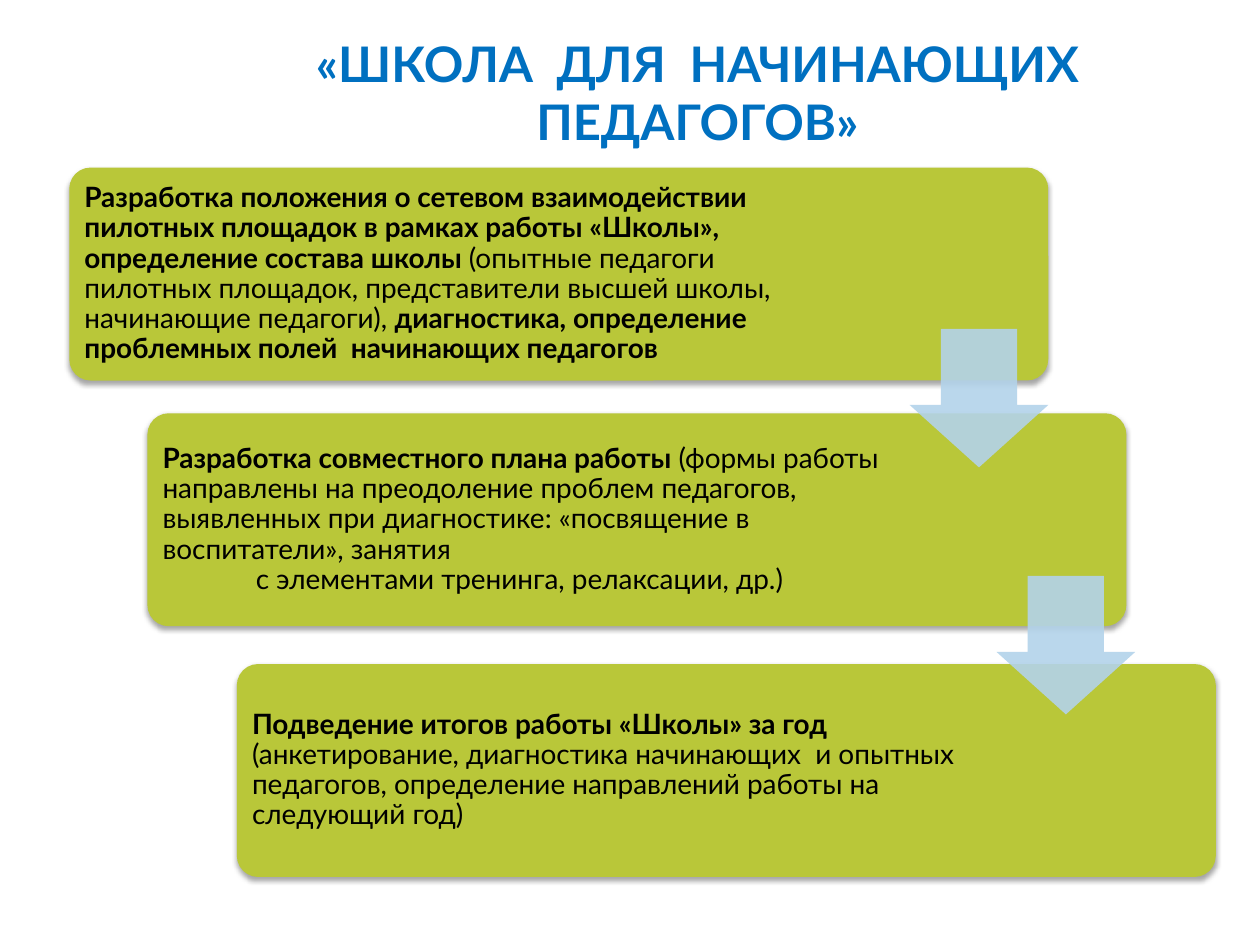
from lxml import etree
from pptx import Presentation
from pptx.dml.color import RGBColor
from pptx.enum.shapes import MSO_SHAPE
from pptx.enum.text import MSO_ANCHOR, MSO_AUTO_SIZE, PP_ALIGN
from pptx.oxml.ns import qn
from pptx.util import Inches, Pt

ROUND = MSO_SHAPE.ROUNDED_RECTANGLE
DOWN = MSO_SHAPE.DOWN_ARROW
MIDDLE = MSO_ANCHOR.MIDDLE
FIXED = MSO_AUTO_SIZE.NONE
CENTER = PP_ALIGN.CENTER
BLUE = RGBColor(0x00, 0x70, 0xC0)
GREEN = RGBColor(0xB9, 0xC7, 0x39)
PALE = RGBColor(0xB3, 0xD3, 0xEA)
BLACK = RGBColor(0, 0, 0)

HEAD = {"name": "Lato", "size": Pt(28), "bold": True}
BODY = {"name": "Lato", "size": Pt(16)}
FRAME = {"word_wrap": True, "auto_size": FIXED, "vertical_anchor": MIDDLE}
INSET = {"margin_" + side: Inches(0.07)
         for side in ("left", "top", "right", "bottom")}

STEPS = [
    (0.55, 1.33, 5.95, [(0, [
        ("Разработка положения о сетевом взаимодействии пилотных площадок "
         "в рамках работы «Школы», определение состава школы ", True),
        ("(опытные педагоги пилотных площадок, представители высшей школы, "
         "начинающие педагоги), ", False),
        ("диагностика, определение проблемных полей  начинающих педагогов",
         True)])]),
    (1.17, 3.28, 5.89, [
        (0, [("Разработка совместного плана работы ", True),
             ("(формы работы направлены на преодоление проблем педагогов, "
              "выявленных при диагностике: «посвящение в воспитатели», "
              "занятия", False)]),
        (0.74, [("с элементами тренинга, релаксации, др.)", False)])]),
    (1.88, 5.27, 5.89, [(0, [
        ("Подведение итогов работы «Школы» за год ", True),
        ("(анкетирование, диагностика начинающих  и опытных педагогов, "
         "определение направлений работы на следующий год)", False)])]),
]
ARROWS = [(7.22, 2.61), (7.91, 4.57)]


def style(item, values):
    for key, value in values.items():
        setattr(item, key, value)


def draw(kind, left, top, width, height, color, adjust):
    shape = slide.shapes.add_shape(
        kind, Inches(left), Inches(top), Inches(width), Inches(height))
    shape.fill.solid()
    shape.fill.fore_color.rgb = color
    shape.line.fill.background()
    shape.shadow.inherit = False
    for i, value in enumerate(adjust):
        shape.adjustments[i] = value
    return shape._element.spPr


deck = Presentation()
deck.slide_width = Inches(10)
deck.slide_height = Inches(7.5)
slide = deck.slides.add_slide(deck.slide_layouts[5])

title = slide.shapes.title
style(title, {"left": Inches(1.57), "top": Inches(0.48),
              "width": Inches(7.93), "height": Inches(0.5)})
style(title.text_frame, FRAME)
para = title.text_frame.paragraphs[0]
para.alignment = CENTER
run = para.add_run()
run.text = "«ШКОЛА  ДЛЯ  НАЧИНАЮЩИХ ПЕДАГОГОВ»"
style(run.font, HEAD)
run.font.color.rgb = BLUE

for left, top, width, paras in STEPS:
    props = draw(ROUND, left, top, 7.77, 1.69, GREEN, [0.1])
    shade = etree.SubElement(
        props.find(qn("a:effectLst")), qn("a:outerShdw"),
        blurRad=str(Pt(3.1)), dist=str(Pt(1.8)), dir="5400000",
        rotWithShape="0")
    tint = etree.SubElement(shade, qn("a:srgbClr"), val=str(BLACK))
    etree.SubElement(tint, qn("a:alpha"), val="35000")

    box = slide.shapes.add_textbox(
        Inches(left + 0.05), Inches(top + 0.05), Inches(width), Inches(1.59))
    frame = box.text_frame
    style(frame, FRAME | INSET)
    for i, (indent, runs) in enumerate(paras):
        para = frame.add_paragraph() if i else frame.paragraphs[0]
        para.line_spacing = 0.9
        para._p.get_or_add_pPr().set("marL", str(Inches(indent)))
        for text, bold in runs:
            run = para.add_run()
            run.text = text
            style(run.font, BODY | {"bold": bold})
            run.font.color.rgb = BLACK

for left, top in ARROWS:
    props = draw(DOWN, left, top, 1.1, 1.1, PALE, [0.55, 0.45])
    tint = props.find(qn("a:solidFill")).find(qn("a:srgbClr"))
    etree.SubElement(tint, qn("a:alpha"), val="90000")

deck.save("out.pptx")
